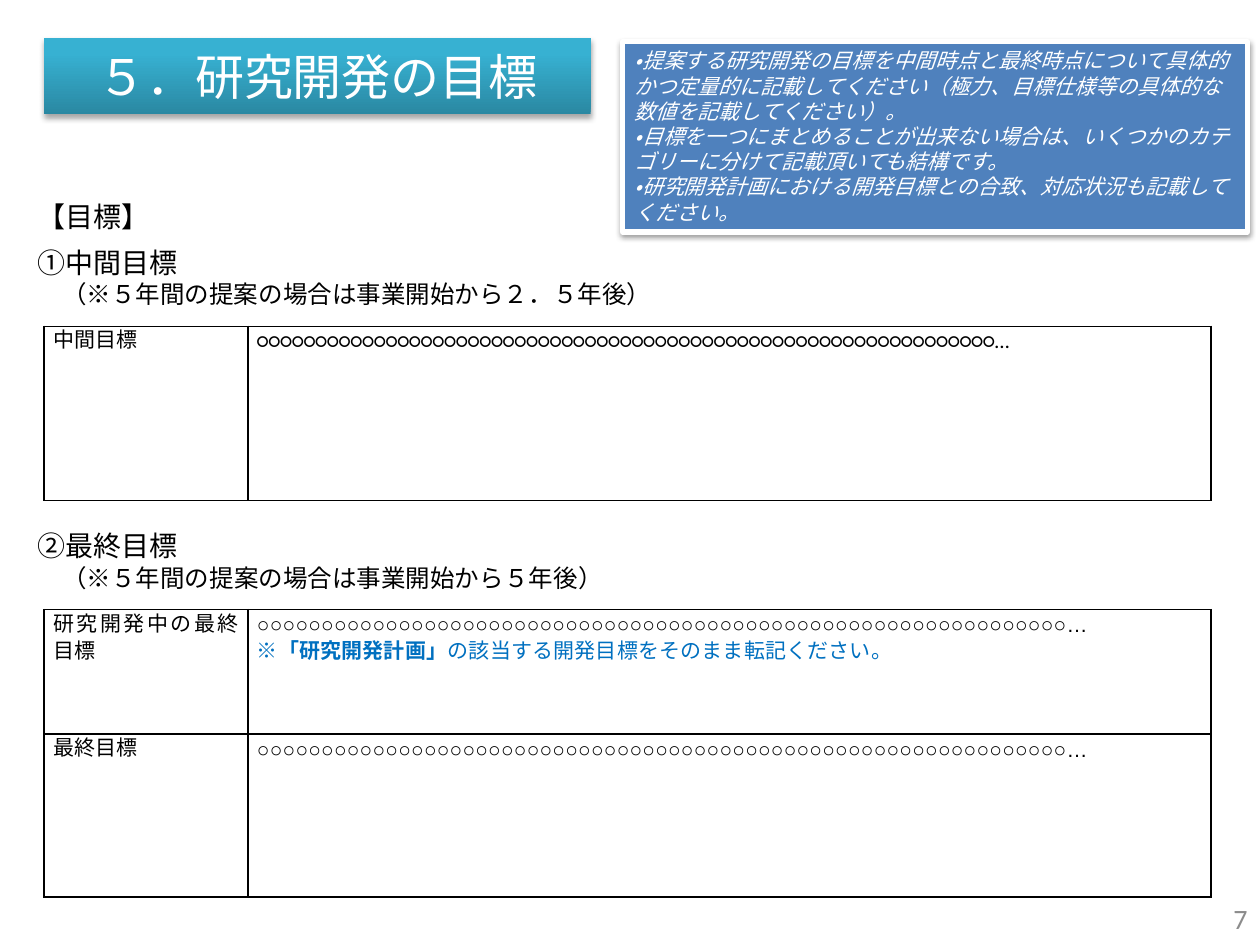
from lxml import etree
from pptx import Presentation
from pptx.dml.color import RGBColor
from pptx.enum.lang import MSO_LANGUAGE_ID
from pptx.enum.shapes import MSO_SHAPE
from pptx.enum.text import MSO_ANCHOR, MSO_AUTO_SIZE, PP_ALIGN
from pptx.oxml import parse_xml
from pptx.util import Cm, Pt

RECT = MSO_SHAPE.RECTANGLE
LEFT, MID, RIGHT, JUST = PP_ALIGN.LEFT, PP_ALIGN.CENTER, PP_ALIGN.RIGHT, PP_ALIGN.JUSTIFY
CENTER, TOP = MSO_ANCHOR.MIDDLE, MSO_ANCHOR.TOP
GROW = MSO_AUTO_SIZE.SHAPE_TO_FIT_TEXT
JAPAN = MSO_LANGUAGE_ID.JAPANESE
NS = "http://schemas.openxmlformats.org/drawingml/2006/main"
WHITE, BLACK, BLUE = "FFFFFF", "000000", "0070C0"
rgb = RGBColor.from_string


def write(frame, text, size=12, font="Arial", color=BLACK, align=LEFT, anchor=TOP,
          italic=None, grow=False, lead=None, track=None):
    """Fill a frame; text is a list of paragraphs, each a list of (text, changes) runs."""
    frame.word_wrap = True
    frame.vertical_anchor = anchor
    if grow:
        frame.auto_size = GROW
    for i, runs in enumerate(text):
        para = frame.add_paragraph() if i else frame.paragraphs[0]
        para.alignment = align
        if lead:
            para.line_spacing = Pt(lead)
        for words, diff in runs:
            run = para.add_run()
            run.text = words
            face = run.font
            face.size = Pt(diff.get("size", size))
            face.name = diff.get("font", font)
            face.color.rgb = rgb(diff.get("color", color))
            face.bold = diff.get("bold")
            face.italic = italic
            face.language_id = JAPAN
            if track:
                run._r.get_or_add_rPr().set("spc", str(track))


def shade(shape, alpha, dist):
    """Give a shape a soft shadow straight below it."""
    shape.shadow.inherit = False
    effects = shape._element.spPr.find(f"{{{NS}}}effectLst")
    effects.append(parse_xml(
        f'<a:outerShdw xmlns:a="{NS}" blurRad="40000" dist="{dist}" dir="5400000" rotWithShape="0">'
        f'<a:srgbClr val="000000"><a:alpha val="{alpha}000"/></a:srgbClr></a:outerShdw>'))


deck = Presentation()
deck.slide_width, deck.slide_height = Cm(25.4), Cm(19.05)
slide = deck.slides.add_slide(deck.slide_layouts[6])
shapes = slide.shapes

# Title bar
title = shapes.add_shape(RECT, Cm(0.89), Cm(0.76), Cm(11.02), Cm(1.55))
title.fill.gradient()
title.fill.gradient_angle = 90
for stop, tone, place in zip(title.fill.gradient_stops, ("2A88A2", "37B1D2"), (0, 0.8)):
    stop.color.rgb = rgb(tone)
    stop.position = place
title.line.fill.background()
shade(title, 35, 23000)
write(title.text_frame, [[("５．研究開発の目標", {})]], size=28, color=WHITE,
      align=MID, anchor=CENTER)

# Guidance box
guide = shapes.add_shape(RECT, Cm(12.55), Cm(0.84), Cm(12.6), Cm(3.84))
guide.fill.solid()
guide.fill.fore_color.rgb = rgb("4F81BD")
guide.line.color.rgb = rgb(WHITE)
guide.line.width = Pt(3)
shade(guide, 38, 20000)
hints = [
    "・提案する研究開発の目標を中間時点と最終時点について具体的かつ定量的に記載してください（極力、目標仕様等の具体的な数値を記載してください）。",
    "・目標を一つにまとめることが出来ない場合は、いくつかのカテゴリーに分けて記載頂いても結構です。",
    "・研究開発計画における開発目標との合致、対応状況も記載してください。",
]
write(guide.text_frame, [[(hint, {})] for hint in hints], color=WHITE, italic=True, grow=True)

# Headings
small = {"size": 14}
heads = [
    (3.89, 7.39, 0.94, [[("【目標】", {})]]),
    (4.83, 24.21, 1.55, [[("①中間目標", {})],
                         [("　（※５年間の提案の場合は事業開始から２．５年後）", small)]]),
    (10.54, 23.93, 1.55, [[("②最終目標", {})],
                          [("　（※", small),
                           ("５年間の提案の場合は事業開始から５年後", {"size": 14, "font": "Noto Sans CJK JP"}),
                           ("）", small)]]),
]
for top, width, height, text in heads:
    box = shapes.add_textbox(Cm(0.51), Cm(top), Cm(width), Cm(height))
    write(box.text_frame, text, size=16, grow=True)

# Goal tables
blank = [("○" * 63 + "…", {})]
note = [("※", {"color": BLUE}),
        ("「研究開発計画」", {"color": BLUE, "bold": True}),
        ("の該当する開発目標をそのまま転記ください。", {"color": BLUE})]
tables = [
    (6.58, "Calibri", [(3.51, "中間目標", [blank])]),
    (12.29, "Arial", [(2.51, "研究開発中の最終目標", [blank, note]),
                      (3.28, "最終目標", [blank])]),
]
widths = (4.11, 19.41)
for top, font, rows in tables:
    total = sum(row[0] for row in rows)
    grid = shapes.add_table(len(rows), 2, Cm(0.89), Cm(top), Cm(sum(widths)), Cm(total)).table
    grid.first_row = grid.horz_banding = False
    for col, width in zip(grid.columns, widths):
        col.width = Cm(width)
    for r, (height, label, body) in enumerate(rows):
        grid.rows[r].height = Cm(height)
        for c, text in enumerate(([[(label, {})]], body)):
            cell = grid.cell(r, c)
            cell.margin_left = cell.margin_right = Cm(0.18)
            cell.margin_top = cell.margin_bottom = 0
            write(cell.text_frame, text, font=font, align=JUST, lead=15.8, track=10)
            props = cell._tc.get_or_add_tcPr()
            for side in ("lnL", "lnR", "lnT", "lnB"):
                edge = etree.SubElement(props, f"{{{NS}}}{side}", w=str(Pt(1)))
                paint = etree.SubElement(edge, f"{{{NS}}}solidFill")
                etree.SubElement(paint, f"{{{NS}}}srgbClr", val=BLACK)
            cell.fill.background()

# Page number
page = shapes.add_textbox(Cm(19.48), Cm(18.01), Cm(5.92), Cm(1.02))
write(page.text_frame, [[("7", {})]], size=16, font="Calibri", color="8C8C8C",
      align=RIGHT, anchor=CENTER)

deck.save("out.pptx")
